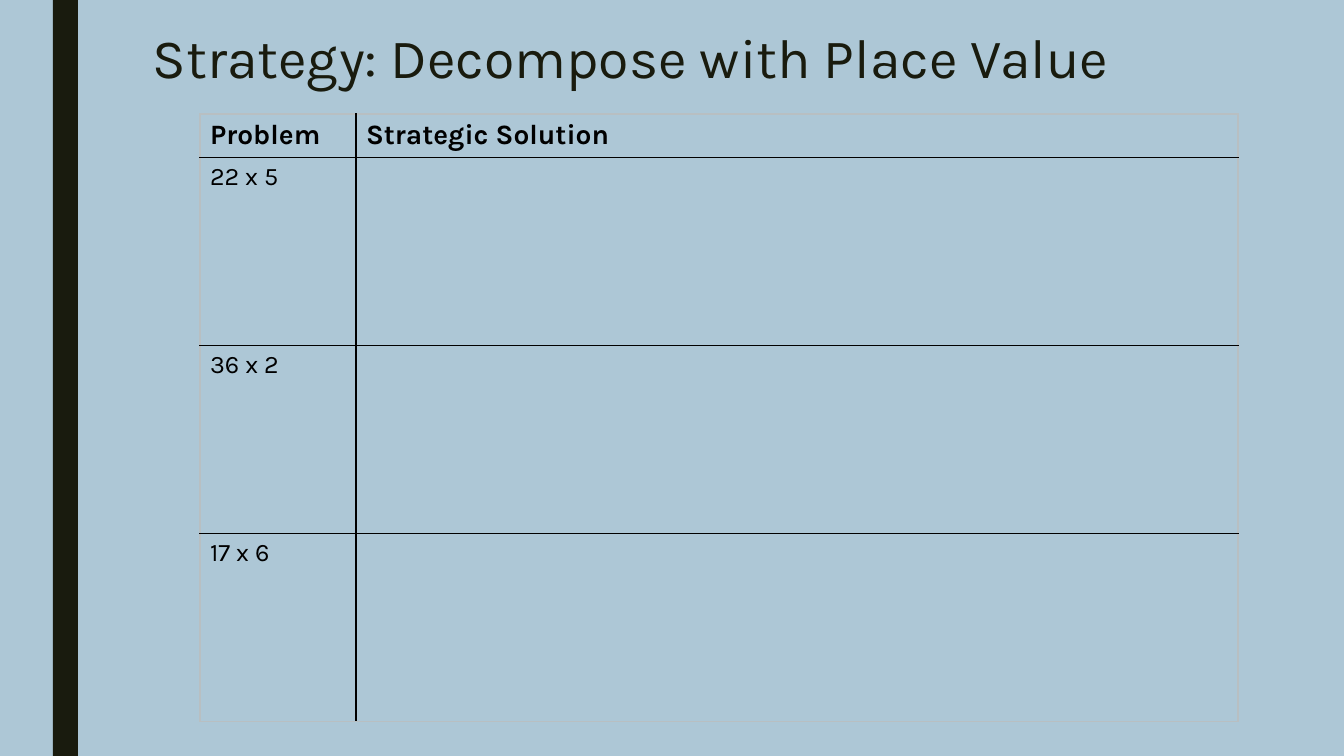
from lxml import etree
from pptx import Presentation
from pptx.dml.color import RGBColor
from pptx.enum.shapes import MSO_SHAPE
from pptx.enum.text import MSO_ANCHOR
from pptx.oxml.ns import qn
from pptx.util import Pt

RECT = MSO_SHAPE.RECTANGLE
MIDDLE = MSO_ANCHOR.MIDDLE

TITLE = "Strategy: Decompose with Place Value"
HEADER = ["Problem", "Strategic Solution"]
PROBLEMS = ["22 x 5", "36 x 2", "17 x 6"]

FONT = "Karla"
SKY, DARK, BLACK, FAINT = "ADC7D6", "191B0E", "000000", "B8BFC2"

SLIDE = (1344, 756)
BAR = (53, 0, 25, 756)
TITLE_BOX = (143, 23, 1058, 76)
TABLE_LEFT, TABLE_TOP = 200, 114
COL_WIDTHS = [156, 882]
ROW_HEIGHTS = [43] + [188] * len(PROBLEMS)


def px(n):
    return round(n * 914400 / 100.8)


def rgb(color):
    return RGBColor.from_string(color)


def add_run(p, text, size, color, bold=False):
    r = p.add_run()
    r.text = text
    r.font.name = FONT
    r.font.size = Pt(size)
    r.font.bold = bold
    r.font.color.rgb = rgb(color)


def add_border(cell, side, color):
    """Draw one edge of a cell; side is L, R, T or B."""
    ln = etree.SubElement(cell._tc.get_or_add_tcPr(), qn("a:ln" + side), w=str(Pt(1)))
    fill = etree.SubElement(ln, qn("a:solidFill"))
    etree.SubElement(fill, qn("a:srgbClr"), val=color)


prs = Presentation()
prs.slide_width, prs.slide_height = map(px, SLIDE)
s = prs.slides.add_slide(prs.slide_layouts[6])
s.background.fill.solid()
s.background.fill.fore_color.rgb = rgb(SKY)

bar = s.shapes.add_shape(RECT, *map(px, BAR))
bar.shadow.inherit = False
bar.fill.solid()
bar.fill.fore_color.rgb = rgb(DARK)
bar.line.fill.background()

tf = s.shapes.add_textbox(*map(px, TITLE_BOX)).text_frame
tf.word_wrap = True
tf.vertical_anchor = MIDDLE
tf.paragraphs[0].line_spacing = 0.89
add_run(tf.paragraphs[0], TITLE, 39.6, DARK)

rows = [HEADER] + [[problem, ""] for problem in PROBLEMS]
last_row, last_col = len(rows) - 1, len(HEADER) - 1
table = s.shapes.add_table(
    len(rows), len(HEADER), px(TABLE_LEFT), px(TABLE_TOP),
    px(sum(COL_WIDTHS)), px(sum(ROW_HEIGHTS))).table
table.horz_banding = False
for column, width in zip(table.columns, COL_WIDTHS):
    column.width = px(width)
for row, height in zip(table.rows, ROW_HEIGHTS):
    row.height = px(height)

for i, texts in enumerate(rows):
    for j, text in enumerate(texts):
        cell = table.cell(i, j)
        outer = {"L": j == 0, "R": j == last_col, "T": i == 0, "B": i == last_row}
        for side, is_outer in outer.items():
            add_border(cell, side, FAINT if is_outer else BLACK)
        cell.fill.background()
        if text:
            is_header = i == 0
            add_run(cell.text_frame.paragraphs[0], text,
                    20 if is_header else 18, BLACK, is_header)

prs.save("out.pptx")
